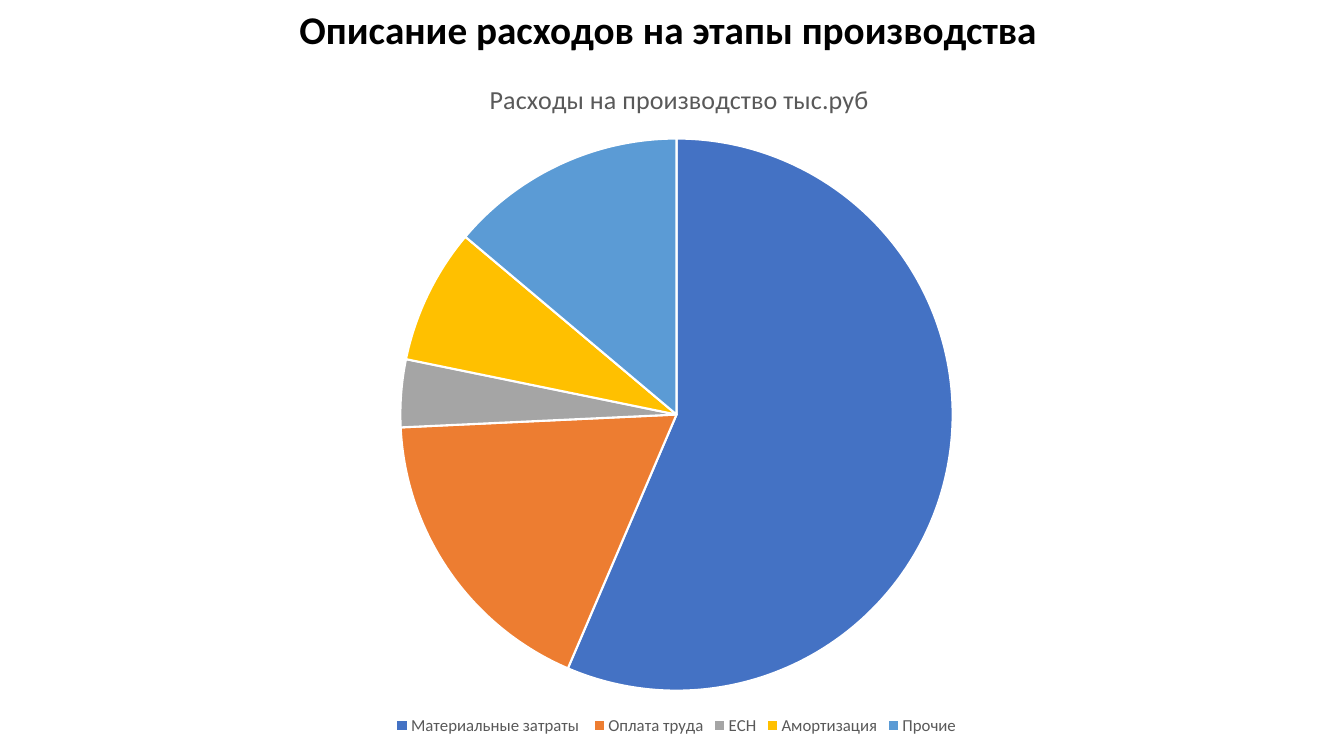
from pptx import Presentation
from pptx.chart.data import CategoryChartData
from pptx.dml.color import RGBColor
from pptx.enum.chart import XL_CHART_TYPE, XL_LEGEND_POSITION
from pptx.enum.text import MSO_ANCHOR, MSO_AUTO_SIZE, PP_ALIGN
from pptx.util import Inches, Pt

PIE = XL_CHART_TYPE.PIE
BOTTOM = XL_LEGEND_POSITION.BOTTOM
TOP = MSO_ANCHOR.TOP
GROW = MSO_AUTO_SIZE.SHAPE_TO_FIT_TEXT
LEFT = PP_ALIGN.LEFT

FONT = "Calibri"
COLORS = {
    "title": "000000",
    "label": "595959",
    "border": "FFFFFF",
}
EXPENSES = [
    ("Материальные затраты ", 57, "4472C4"),
    ("Оплата труда", 18, "ED7D31"),
    ("ЕСН", 4, "A5A5A5"),
    ("Амортизация", 8, "FFC000"),
    ("Прочие", 14, "5B9BD5"),
]
SERIES_NAME = " Расходы на производство тыс.руб"


def format_font(font, size, color, bold=False):
    font.name = FONT
    font.size = Pt(size)
    font.bold = bold
    font.color.rgb = RGBColor.from_string(color)


def write_text(text_frame, text, size, color, bold=False, align=None):
    paragraph = text_frame.paragraphs[0]
    paragraph.alignment = align
    run = paragraph.add_run()
    run.text = text
    format_font(run.font, size, color, bold)


presentation = Presentation()
presentation.slide_width = Inches(13.33)
presentation.slide_height = Inches(7.5)
slide = presentation.slides.add_slide(presentation.slide_layouts[5])

# Slide title
title = slide.shapes.title
title.left, title.top = Inches(2.87), Inches(0)
title.width, title.height = Inches(8.15), Inches(0.57)
title.text_frame.word_wrap = True
title.text_frame.auto_size = GROW
title.text_frame.vertical_anchor = TOP
write_text(title.text_frame, "Описание расходов на этапы производства",
           size=28, color=COLORS["title"], bold=True, align=LEFT)

# Pie chart of expenses
chart_data = CategoryChartData()
chart_data.categories = [name for name, value, color in EXPENSES]
chart_data.add_series(SERIES_NAME, [value for name, value, color in EXPENSES])
chart = slide.shapes.add_chart(PIE, Inches(0), Inches(0.57), Inches(13.42),
                               Inches(6.77), chart_data).chart
format_font(chart.font, 10, COLORS["title"])

# Chart title and legend
chart.has_title = True
chart.chart_title.include_in_layout = False
write_text(chart.chart_title.text_frame, SERIES_NAME,
           size=18.6, color=COLORS["label"])
chart.has_legend = True
chart.legend.position = BOTTOM
chart.legend.include_in_layout = False
format_font(chart.legend.font, 12, COLORS["label"])

# Slice colours and white borders
plot = chart.plots[0]
plot.vary_by_categories = True
for index, (name, value, color) in enumerate(EXPENSES):
    slice_format = plot.series[0].points[index].format
    slice_format.fill.solid()
    slice_format.fill.fore_color.rgb = RGBColor.from_string(color)
    slice_format.line.color.rgb = RGBColor.from_string(COLORS["border"])
    slice_format.line.width = Pt(1.5)

presentation.save("out.pptx")
